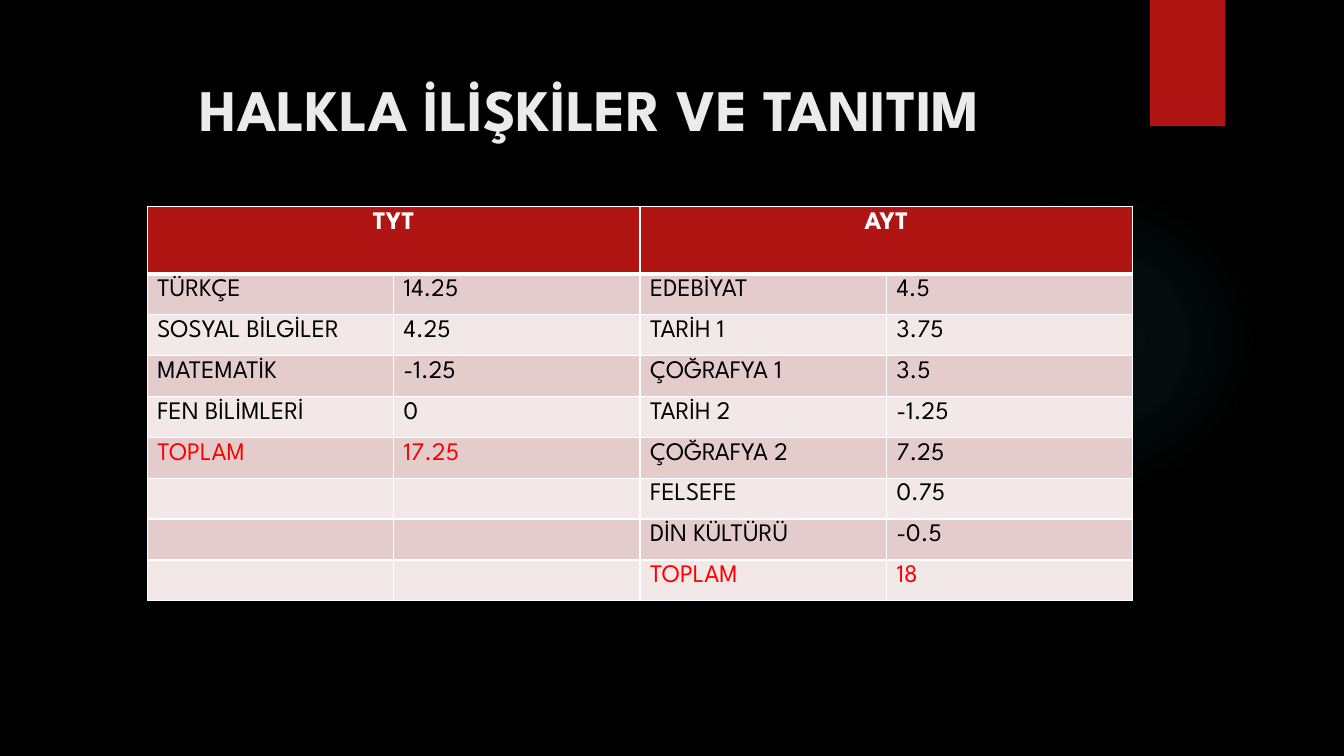
from lxml.etree import SubElement
from pptx import Presentation
from pptx.dml.color import RGBColor
from pptx.enum.shapes import MSO_SHAPE
from pptx.enum.text import MSO_ANCHOR, PP_ALIGN
from pptx.oxml import parse_xml
from pptx.oxml.ns import nsdecls, qn
from pptx.util import Cm, Pt

BLACK = RGBColor(0x00, 0x00, 0x00)
WHITE = RGBColor(0xFF, 0xFF, 0xFF)
TITLE_GREY = RGBColor(0xEB, 0xEB, 0xEB)
CRIMSON = RGBColor(0xB0, 0x15, 0x13)
TOTAL_RED = RGBColor(0xFF, 0x00, 0x00)
BAND_DARK = RGBColor(0xE4, 0xCC, 0xCC)
BAND_LIGHT = RGBColor(0xF2, 0xE8, 0xE7)
GLOW_TEAL = RGBColor(0x50, 0xB9, 0xC1)

TITLE = "HALKLA İLİŞKİLER VE TANITIM"
EXAMS = ["TYT", "AYT"]
SCORES = [
    ["TÜRKÇE", "14.25", "EDEBİYAT", "4.5"],
    ["SOSYAL BİLGİLER", "4.25", "TARİH 1", "3.75"],
    ["MATEMATİK", "-1.25", "ÇOĞRAFYA 1", "3.5"],
    ["FEN BİLİMLERİ", "0", "TARİH 2", "-1.25"],
    ["TOPLAM", "17.25", "ÇOĞRAFYA 2", "7.25"],
    ["", "", "FELSEFE", "0.75"],
    ["", "", "DİN KÜLTÜRÜ", "-0.5"],
    ["", "", "TOPLAM", "18"],
]


def write(frame, text, font="League Spartan", size=18, color=BLACK,
          bold=False, align=PP_ALIGN.LEFT):
    paragraph = frame.paragraphs[0]
    paragraph.alignment = align
    run = paragraph.add_run()
    run.text = text
    run.font.name = font
    run.font.size = Pt(size)
    run.font.bold = bold
    run.font.color.rgb = color


def style_cell(cell, fill, top=1, bottom=1):
    """Give a cell white borders (widths in points) and a solid fill."""
    properties = cell._tc.get_or_add_tcPr()
    for side, width in (("L", 1), ("R", 1), ("T", top), ("B", bottom)):
        border = SubElement(properties, qn(f"a:ln{side}"), w=str(Pt(width)))
        solid = SubElement(border, qn("a:solidFill"))
        SubElement(solid, qn("a:srgbClr"), val=str(WHITE))
    cell.fill.solid()
    cell.fill.fore_color.rgb = fill


class ScoreSlide:
    def __init__(self, presentation):
        self.slide = presentation.slides.add_slide(presentation.slide_layouts[6])
        self.shapes = self.slide.shapes
        background = self.slide.background.fill
        background.solid()
        background.fore_color.rgb = BLACK

    def block(self, preset, left, top, width, height, color):
        shape = self.shapes.add_shape(preset, Cm(left), Cm(top), Cm(width), Cm(height))
        shape.shadow.inherit = False
        shape.line.fill.background()
        shape.fill.solid()
        shape.fill.fore_color.rgb = color
        return shape

    def glow(self, left, top, size, color):
        """Draw a circle whose faint colour fades out from its centre."""
        circle = self.block(MSO_SHAPE.OVAL, left, top, size, size, color)
        stops = "".join(
            f'<a:gs pos="{position}000"><a:srgbClr val="{color}">'
            f'<a:alpha val="{alpha}000"/></a:srgbClr></a:gs>'
            for position, alpha in ((0, 7), (36, 6), (69, 0)))
        gradient = parse_xml(
            f'<a:gradFill {nsdecls("a")}><a:gsLst>{stops}</a:gsLst><a:path path="circle">'
            '<a:fillToRect l="50000" t="50000" r="50000" b="50000"/></a:path></a:gradFill>')
        properties = circle._element.spPr
        properties.replace(properties.find(qn("a:solidFill")), gradient)

    def title(self, text, left, top, width, height):
        frame = self.shapes.add_textbox(Cm(left), Cm(top), Cm(width), Cm(height)).text_frame
        frame.word_wrap = True
        frame.vertical_anchor = MSO_ANCHOR.TOP
        frame.margin_top = Cm(0.56)
        write(frame, text, size=42, color=TITLE_GREY, bold=True, align=PP_ALIGN.CENTER)

    def score_table(self, left, top, column_width, header_height, row_height):
        rows, columns = len(SCORES) + 1, len(SCORES[0])
        table = self.shapes.add_table(
            rows, columns, Cm(left), Cm(top), Cm(column_width * columns),
            Cm(header_height + row_height * len(SCORES))).table
        for column in table.columns:
            column.width = Cm(column_width)
        for row in table.rows:
            row.height = Cm(row_height)
        table.rows[0].height = Cm(header_height)

        for column in range(columns):
            style_cell(table.cell(0, column), CRIMSON, bottom=3)
        for index, exam in enumerate(EXAMS):
            header = table.cell(0, 2 * index)
            header.merge(table.cell(0, 2 * index + 1))
            write(header.text_frame, exam, color=WHITE, bold=True, align=PP_ALIGN.CENTER)

        for row, scores in enumerate(SCORES, start=1):
            for column, text in enumerate(scores):
                cell = table.cell(row, column)
                style_cell(cell, BAND_DARK if row % 2 else BAND_LIGHT,
                           top=3 if row == 1 else 1)
                subject = scores[column - column % 2]
                if text:
                    write(cell.text_frame, text,
                          color=TOTAL_RED if subject == "TOPLAM" else BLACK)


def main():
    presentation = Presentation()
    presentation.slide_width = Cm(33.87)
    presentation.slide_height = Cm(19.05)
    page = ScoreSlide(presentation)
    page.glow(23.9, 4.65, 7.82, GLOW_TEAL)
    page.block(MSO_SHAPE.RECTANGLE, 28.98, 0, 1.9, 3.18, CRIMSON)
    page.title(TITLE, 1.8, 1.27, 26.14, 3.89)
    page.score_table(3.71, 5.21, 6.21, 1.69, 1.03)
    presentation.save("out.pptx")


if __name__ == "__main__":
    main()
